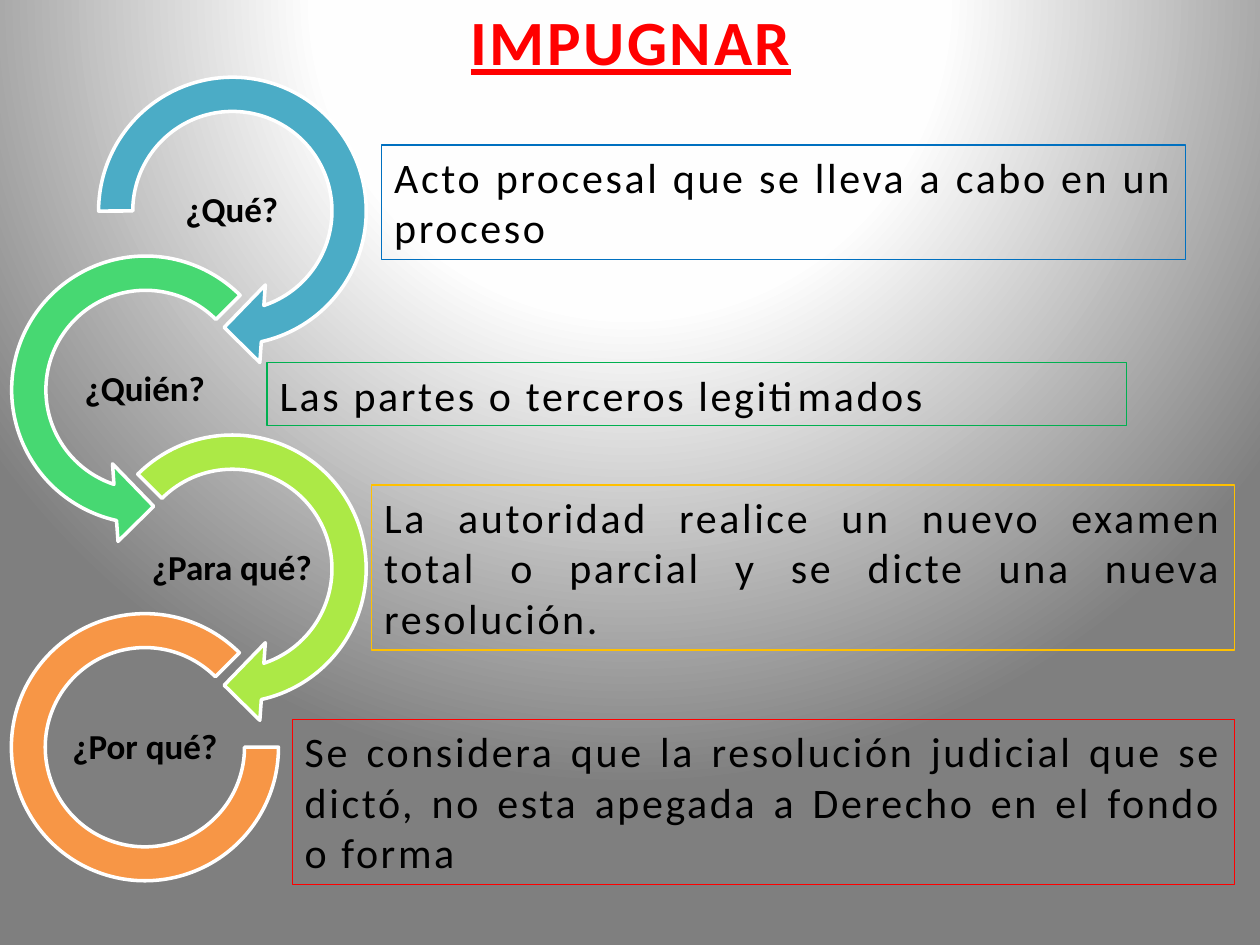
"""Build a slide that defines IMPUGNAR through four linked questions."""
from dataclasses import dataclass

from pptx import Presentation
from pptx import util as u
from pptx.dml import color as dml
from pptx.enum import shapes, text
from pptx.oxml import parse_xml

HUES = {
    "white": "FFFFFF", "pale": "FEFEFE", "gray": "7F7F7F", "black": "000000",
    "teal": "4BACC6", "mint": "47D872", "lime": "ACE946", "orange": "F79646",
    "blue": "0070C0", "green": "00B050", "gold": "FFC000", "red": "FF0000",
}
COLS, ROWS = 10, 7.5
CELL = u.Inches(1)
STEP = 1.42
NS = "http://schemas.openxmlformats.org/drawingml/2006/main"
NSP = "http://schemas.openxmlformats.org/presentationml/2006/main"
FORM = shapes.MSO_SHAPE
ALIGN = text.PP_ALIGN
MID = text.MSO_ANCHOR.MIDDLE


@dataclass
class Ring:
    label: str
    form: FORM
    hue: str
    left: float
    bends: tuple
    size: float = 2.47
    inset: float = 0


@dataclass
class Box:
    words: str
    hue: str
    area: tuple
    align: ALIGN = ALIGN.JUSTIFY


RINGS = (
    Ring("¿Qué?", FORM.CIRCULAR_ARROW, "teal", 0.61, (0.11, 11.423, 45, 108, 0.125)),
    Ring("¿Quién?", FORM.LEFT_CIRCULAR_ARROW, "mint", -0.08, (0.11, 11.423, 63, 189, 0.125)),
    Ring("¿Para qué?", FORM.CIRCULAR_ARROW, "lime", 0.61, (0.11, 11.423, 45, 135, 0.125)),
    Ring("¿Por qué?", FORM.BLOCK_ARC, "orange", -0.08, (0, 189, 0.127), 2.12, 0.17),
)
BOXES = (
    Box("Acto procesal que se lleva a cabo en un proceso", "blue", (3.03, 1.15, 6.38, 0.91)),
    Box("Las partes o terceros legitimados", "green", (2.12, 2.88, 6.82, 0.5), ALIGN.LEFT),
    Box("La autoridad realice un nuevo examen total o parcial y se dicte una "
        "nueva resolución.", "gold", (2.95, 3.85, 6.85, 1.31)),
    Box("Se considera que la resolución judicial que se dictó, no esta apegada a "
        "Derecho en el fondo o forma", "red", (2.32, 5.71, 7.48, 1.31)),
)


def tint(name: str) -> dml.RGBColor:
    """Give the colour of a named hue."""
    return dml.RGBColor.from_string(HUES[name])


def place(*area: float) -> list:
    """Turn columns and rows into lengths."""
    return [round(part * CELL) for part in area]


def assign(item, **form) -> None:
    """Set each format value on an item."""
    for key, value in form.items():
        setattr(item, key, value)


def write(frame, words: str, align, hue: str = "black", gap: int = 0, **font) -> None:
    """Put one formatted paragraph in a frame."""
    para = frame.paragraphs[0]
    para.alignment = align
    run = para.add_run()
    run.text = words
    assign(run.font, name="Calibri", **font)
    run.font.color.rgb = tint(hue)
    if gap:
        run.font._element.set("spc", str(gap))


def edge(shape, hue: str, width: float) -> None:
    """Outline a shape and drop its shadow."""
    shape.shadow.inherit = False
    shape.line.color.rgb = tint(hue)
    shape.line.width = u.Pt(width)


def shade(slide) -> None:
    """Fill the background with a round gradient."""
    stops = "".join(
        f'<a:gs pos="{pos}"><a:srgbClr val="{HUES[hue]}"/></a:gs>'
        for pos, hue in ((0, "white"), (40000, "pale"), (100000, "gray")))
    slide.element.cSld.insert(0, parse_xml(
        f'<p:bg xmlns:p="{NSP}" xmlns:a="{NS}"><p:bgPr><a:gradFill rotWithShape="1">'
        f'<a:gsLst>{stops}</a:gsLst><a:path path="circle">'
        '<a:fillToRect l="50000" t="-80000" r="50000" b="180000"/></a:path>'
        '</a:gradFill><a:effectLst/></p:bgPr></p:bg>'))


def head(slide) -> None:
    """Format and fill the title."""
    title = slide.shapes.title
    left, top, width, height = place(3.51, -0.03, 2.99, 0.71)
    assign(title, left=left, top=top, width=width, height=height)
    assign(title.text_frame, word_wrap=False, vertical_anchor=text.MSO_ANCHOR.TOP,
           auto_size=text.MSO_AUTO_SIZE.SHAPE_TO_FIT_TEXT)
    write(title.text_frame, "IMPUGNAR", ALIGN.CENTER, "red", 150,
          size=u.Pt(36), bold=True, underline=True)


def draw_ring(slide, ring: Ring, row: int) -> None:
    """Draw a ring and its question."""
    top = 0.44 + row * STEP
    arc = slide.shapes.add_shape(ring.form, *place(
        ring.left + ring.inset, top + ring.inset, ring.size, ring.size))
    for spot, bend in enumerate(ring.bends):
        arc.adjustments[spot] = bend
    arc.fill.solid()
    arc.fill.fore_color.rgb = tint(ring.hue)
    edge(arc, "white", 2)
    frame = slide.shapes.add_textbox(
        *place(ring.left + 0.54, top + 0.89, 1.38, 0.69)).text_frame
    pad = u.Inches(0.01)
    assign(frame, word_wrap=True, vertical_anchor=MID, margin_left=pad,
           margin_right=pad, margin_top=pad, margin_bottom=pad)
    write(frame, ring.label, ALIGN.CENTER, size=u.Pt(20), bold=True)
    frame.paragraphs[0].line_spacing = 0.9


def draw_box(slide, box: Box) -> None:
    """Draw an outlined answer."""
    rect = slide.shapes.add_shape(FORM.RECTANGLE, *place(*box.area))
    rect.fill.background()
    edge(rect, box.hue, 0.75)
    assign(rect.text_frame, word_wrap=True, vertical_anchor=text.MSO_ANCHOR.TOP,
           auto_size=text.MSO_AUTO_SIZE.SHAPE_TO_FIT_TEXT)
    write(rect.text_frame, box.words, box.align, gap=150, size=u.Pt(24))


def main() -> None:
    """Build and save the slide."""
    deck = Presentation()
    deck.slide_width, deck.slide_height = place(COLS, ROWS)
    slide = deck.slides.add_slide(deck.slide_layouts.get_by_name("Title Only"))
    shade(slide)
    head(slide)
    for row, ring in enumerate(RINGS):
        draw_ring(slide, ring, row)
    for box in BOXES:
        draw_box(slide, box)
    deck.save("out.pptx")


if __name__ == "__main__":
    main()
